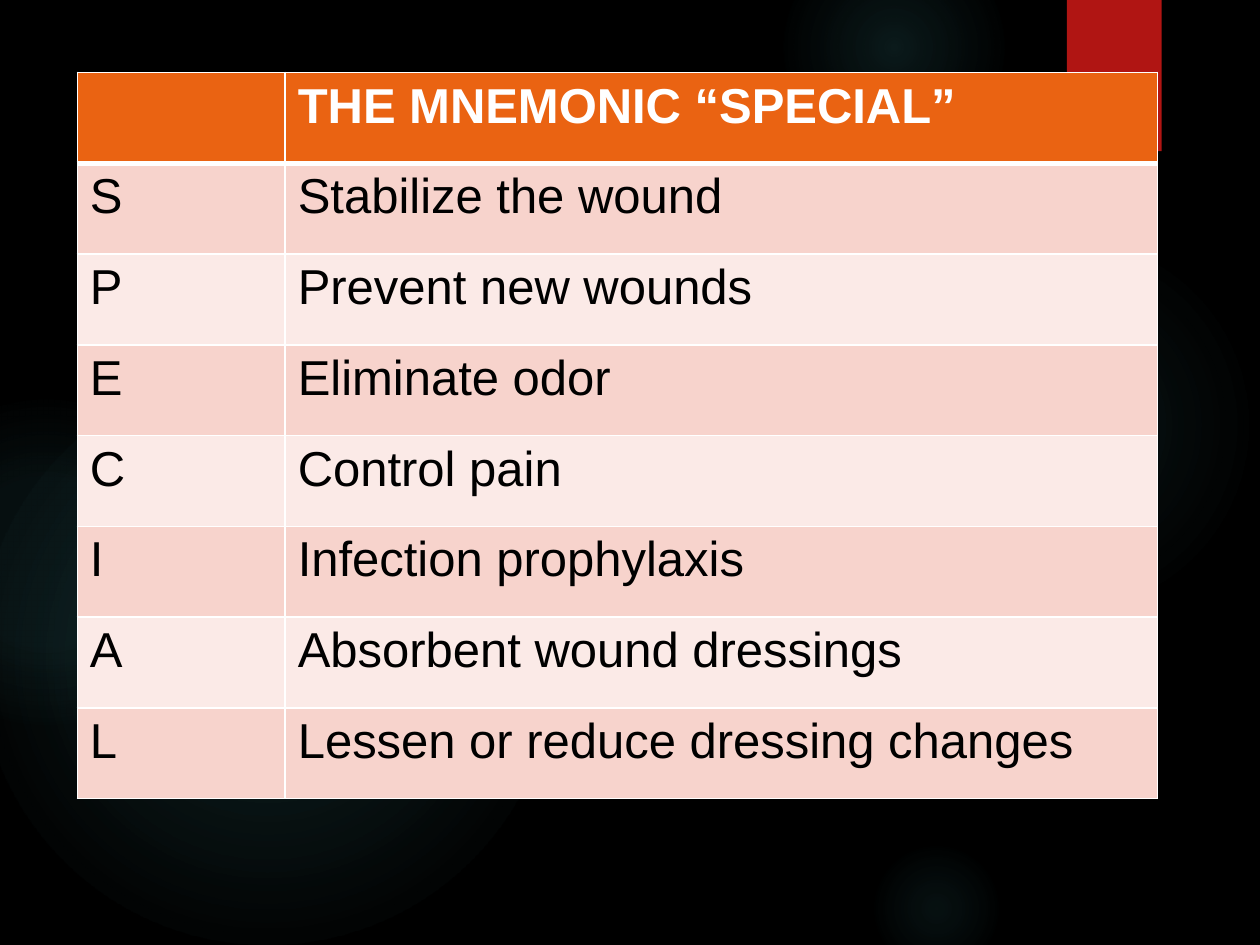
from dataclasses import dataclass

from pptx import Presentation
from pptx.dml.color import RGBColor
from pptx.enum.shapes import MSO_SHAPE
from pptx.oxml import parse_xml
from pptx.oxml.ns import nsdecls, qn
from pptx.util import Cm, Pt

ELLIPSE = MSO_SHAPE.OVAL
RECTANGLE = MSO_SHAPE.RECTANGLE
BLANK_LAYOUT = 6


@dataclass(frozen=True)
class Theme:
    font: str = "Arial"
    text_size: int = 28
    background: str = "000000"
    glow: str = "50B9C1"
    tab: str = "B01513"
    header: str = "EA6312"
    header_text: str = "FFFFFF"
    body_text: str = "000000"
    bands: tuple = ("F7D3CC", "FBEAE7")
    rule: str = "FFFFFF"
    thin_rule: int = 1
    thick_rule: int = 3


# left, top, diameter in cm; then (position %, opacity %) of each stop
GLOWS = [
    (17.5, 4.65, 7.82, [(0, 7), (36, 6), (69, 0)]),
    (15.8, -1.27, 4.45, [(0, 14), (36, 7), (73, 0)]),
    (17.5, 16.94, 2.74, [(0, 9), (36, 5), (66, 0)]),
    (-0.43, 7.42, 11.63, [(0, 11), (36, 10), (75, 0)]),
    (-2.34, 8.05, 6.55, [(0, 8), (36, 8), (72, 0)]),
]

MNEMONIC = [
    ("", "THE MNEMONIC “SPECIAL”"),
    ("S", "Stabilize the wound"),
    ("P", "Prevent new wounds"),
    ("E", "Eliminate odor"),
    ("C", "Control pain"),
    ("I", "Infection prophylaxis"),
    ("A", "Absorbent wound dressings"),
    ("L", "Lessen or reduce dressing changes"),
]


class SlideBuilder:
    def __init__(self, slide, theme):
        self.slide = slide
        self.theme = theme

    def background(self):
        fill = self.slide.background.fill
        fill.solid()
        fill.fore_color.rgb = RGBColor.from_string(self.theme.background)

    def shape(self, preset, left, top, width, height, color):
        shape = self.slide.shapes.add_shape(
            preset, Cm(left), Cm(top), Cm(width), Cm(height))
        shape.shadow.inherit = False
        shape.fill.solid()
        shape.fill.fore_color.rgb = RGBColor.from_string(color)
        shape.line.fill.background()
        return shape

    def glow(self, left, top, diameter, stops):
        """Draw a circle that fades out from its centre."""
        color = self.theme.glow
        circle = self.shape(ELLIPSE, left, top, diameter, diameter, color)
        stop_xml = "".join(
            f'<a:gs pos="{position * 1000}"><a:srgbClr val="{color}">'
            f'<a:alpha val="{opacity * 1000}"/></a:srgbClr></a:gs>'
            for position, opacity in stops)
        gradient = parse_xml(
            f'<a:gradFill {nsdecls("a")} rotWithShape="1">'
            f'<a:gsLst>{stop_xml}</a:gsLst><a:path path="circle">'
            '<a:fillToRect l="50000" t="50000" r="50000" b="50000"/>'
            '</a:path></a:gradFill>')
        properties = circle.fill._xPr
        properties.replace(properties.find(qn("a:solidFill")), gradient)

    def borders(self, cell, **widths):
        """Rule all four sides; widths overrides a side (L, R, T, B) in points."""
        properties = cell._tc.get_or_add_tcPr()
        for side in "LRTB":
            width = Pt(widths.get(side, self.theme.thin_rule))
            properties.append(parse_xml(
                f'<a:ln{side} {nsdecls("a")} w="{width}"><a:solidFill>'
                f'<a:srgbClr val="{self.theme.rule}"/>'
                f'</a:solidFill></a:ln{side}>'))

    def cell(self, cell, text, row):
        theme = self.theme
        is_header = row == 0
        heavy_side = {0: "B", 1: "T"}.get(row)
        self.borders(cell, **({heavy_side: theme.thick_rule} if heavy_side else {}))
        color = theme.header if is_header else theme.bands[(row - 1) % 2]
        cell.fill.solid()
        cell.fill.fore_color.rgb = RGBColor.from_string(color)
        cell.text_frame.text = text
        font = cell.text_frame.paragraphs[0].font
        for run in cell.text_frame.paragraphs[0].runs:
            font = run.font
            font.name = theme.font
            font.size = Pt(theme.text_size)
            font.bold = is_header
            font.color.rgb = RGBColor.from_string(
                theme.header_text if is_header else theme.body_text)

    def table(self, left, top, column_widths, row_height, rows):
        table = self.slide.shapes.add_table(
            len(rows), len(column_widths), Cm(left), Cm(top),
            Cm(sum(column_widths)), Cm(row_height * len(rows))).table
        for column, width in zip(table.columns, column_widths):
            column.width = Cm(width)
        for index, texts in enumerate(rows):
            table.rows[index].height = Cm(row_height)
            for column, text in enumerate(texts):
                self.cell(table.cell(index, column), text, index)


def main():
    presentation = Presentation()
    presentation.slide_width = Cm(25.4)
    presentation.slide_height = Cm(19.05)
    slide = presentation.slides.add_slide(
        presentation.slide_layouts[BLANK_LAYOUT])
    theme = Theme()
    builder = SlideBuilder(slide, theme)
    builder.background()
    for glow in GLOWS:
        builder.glow(*glow)
    builder.shape(RECTANGLE, 21.51, 0, 1.91, 3.05, theme.tab)
    builder.table(1.56, 1.46, (4.19, 17.58), 1.83, MNEMONIC)
    presentation.save("out.pptx")


if __name__ == "__main__":
    main()
